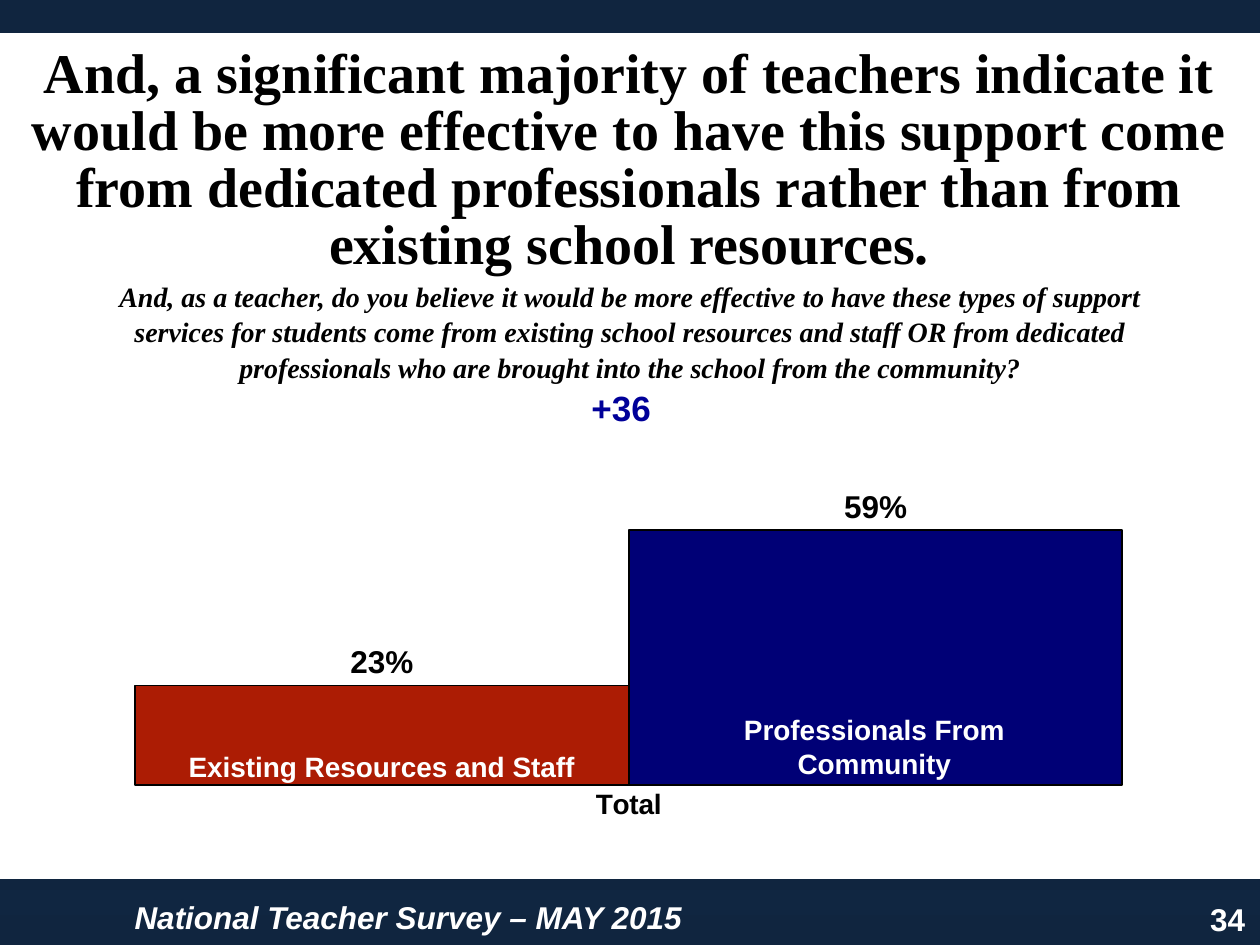
import copy
import lxml.etree
import pptx
import pptx.chart.data
import pptx.dml.color
import pptx.enum.chart
import pptx.enum.shapes
import pptx.enum.text
import pptx.oxml.ns
import pptx.util

Pt = pptx.util.Pt
qn = pptx.oxml.ns.qn
ALIGN = pptx.enum.text.PP_ALIGN

THEME = {
    "navy": "10253F", "mid_navy": "17375E", "white": "FFFFFF", "black": "000000",
    "red": "AC1C04", "blue": "000076", "margin_blue": "000099",
    "sans": "Arial", "serif": "Times New Roman",
    "title": 32, "margin": 20, "footer": 18, "value": 18, "body": 16,
}

SLIDE_SIZE = (720, 540)
PANEL = (-7.2, 15.84, 733.7, 489.6)
CHART_BOX = (-4.3, -14.4, 727.9, 525.6)
PLOT = {"x": 0.015, "y": 0.387, "w": 0.969, "h": 0.494}
CATEGORIES = ["Total"]
SERIES = [("Existing Resources and Staff", 0.23, "red"),
          ("Professionals From Community", 0.59, "blue")]

QUESTION = [
    "And, as a teacher, do you believe it would be more effective to have these types of support",
    "services for students come from existing school resources and staff OR from dedicated",
    "professionals who are brought into the school from the community?",
]
TITLE = ("And, a significant majority of teachers indicate it would be more effective to have "
         "this support come from dedicated professionals rather than from existing school resources.")

FOOTER = {"size": "footer", "color": "white"}
BAR_LABEL = {"size": "body", "color": "white", "align": ALIGN.CENTER}
TEXTS = [
    (["34"], (646.6, 510.5, 72, 28.8), {**FOOTER, "align": ALIGN.RIGHT}),
    (["National Teacher Survey – MAY 2015"], (69.8, 509.8, 562.3, 28.8),
     {**FOOTER, "align": ALIGN.LEFT, "italic": True}),
    (QUESTION, (0, 156.2, 720, 67.7),
     {"size": "body", "font": "serif", "italic": True, "gap": 1}),
    (["Existing Resources and Staff"], (76.3, 424.8, 283.7, 26.6), BAR_LABEL),
    (["Professionals From", "Community"], (357.8, 403.9, 283.7, 46.1), BAR_LABEL),
    ([TITLE], (-7.9, 23.8, 735.1, 139), {"size": "title", "font": "serif", "spacing": 0.85}),
    (["+36"], (306.7, 217.4, 96.5, 31.7), {"size": "margin", "color": "margin_blue"}),
]


def rgb(name):
    return pptx.dml.color.RGBColor.from_string(THEME[name])


def style_font(font, size, color="black", face="sans", bold=True, italic=False):
    font.name = THEME[face]
    font.size = Pt(THEME[size])
    font.bold = bold
    font.italic = italic
    font.color.rgb = rgb(color)


def add_background(slide):
    """Vertical gradient, lighter in the middle."""
    fill = slide.background.fill
    fill.gradient()
    fill.gradient_angle = 90
    stops = slide.element.find(".//" + qn("a:gsLst"))
    stops.insert(1, copy.deepcopy(stops[0]))
    for stop, position, color in zip(fill.gradient_stops, (0, 0.5, 1),
                                     ("navy", "mid_navy", "navy")):
        stop.position = position
        stop.color.rgb = rgb(color)


def add_panel(slide):
    sp = slide.shapes.add_shape(pptx.enum.shapes.MSO_SHAPE.RECTANGLE, *map(Pt, PANEL))
    sp.shadow.inherit = False
    sp.fill.solid()
    sp.fill.fore_color.rgb = rgb("white")
    sp.line.color.rgb = rgb("navy")
    sp.line.width = Pt(6)


def add_text(slide, lines, box, size, color="black", font="sans", italic=False,
             align=ALIGN.CENTER, spacing=None, gap=0):
    tf = slide.shapes.add_textbox(*map(Pt, box)).text_frame
    tf.word_wrap = True
    for i, line in enumerate(lines):
        p = tf.add_paragraph() if i else tf.paragraphs[0]
        p.alignment = align
        if spacing:
            p.line_spacing = spacing
        if i and gap:
            p.space_before = Pt(gap)
        r = p.add_run()
        r.text = line
        style_font(r.font, size, color, font, italic=italic)


def set_plot_layout(chart):
    """Fix the inner plot area as fractions of the chart."""
    area = chart.plots[0]._element.getparent()
    layout = area.find(qn("c:layout"))
    if layout is None:
        layout = lxml.etree.Element(qn("c:layout"))
        area.insert(0, layout)
    manual = lxml.etree.SubElement(layout, qn("c:manualLayout"))
    settings = [("layoutTarget", "inner"), ("xMode", "edge"), ("yMode", "edge")]
    for tag, value in settings + list(PLOT.items()):
        lxml.etree.SubElement(manual, qn("c:" + tag)).set("val", str(value))


def add_survey_chart(slide):
    xl = pptx.enum.chart
    data = pptx.chart.data.CategoryChartData(number_format="0%")
    data.categories = CATEGORIES
    for name, value, _ in SERIES:
        data.add_series(name, [value])
    chart = slide.shapes.add_chart(xl.XL_CHART_TYPE.COLUMN_CLUSTERED,
                                   *map(Pt, CHART_BOX), data).chart
    chart.has_legend = False
    chart.has_title = False
    style_font(chart.font, "value", bold=False)
    set_plot_layout(chart)

    for axis in (chart.category_axis, chart.value_axis):
        axis.has_major_gridlines = False
        axis.major_tick_mark = axis.minor_tick_mark = xl.XL_TICK_MARK.NONE
        axis.format.line.fill.background()
    style_font(chart.category_axis.tick_labels.font, "body")
    values = chart.value_axis
    values.tick_label_position = xl.XL_TICK_LABEL_POSITION.NONE
    values.minimum_scale, values.maximum_scale, values.major_unit = 0, 1.05, 0.1

    plot = chart.plots[0]
    plot.gap_width = 50
    plot.overlap = 0
    plot.vary_by_categories = False
    for series, (_, _, color) in zip(plot.series, SERIES):
        series.format.fill.solid()
        series.format.fill.fore_color.rgb = rgb(color)
        series.format.line.color.rgb = rgb("black")
        series.format.line.width = Pt(1)
        labels = series.data_labels
        labels.show_value = True
        labels.number_format = "0%"
        labels.number_format_is_linked = False
        labels.position = xl.XL_LABEL_POSITION.OUTSIDE_END
        style_font(labels.font, "value")


def main():
    prs = pptx.Presentation()
    prs.slide_width, prs.slide_height = map(Pt, SLIDE_SIZE)
    slide = prs.slides.add_slide(prs.slide_layouts[6])
    add_background(slide)
    add_panel(slide)
    add_survey_chart(slide)
    for lines, box, style in TEXTS:
        add_text(slide, lines, box, **style)
    prs.save("out.pptx")


if __name__ == "__main__":
    main()
